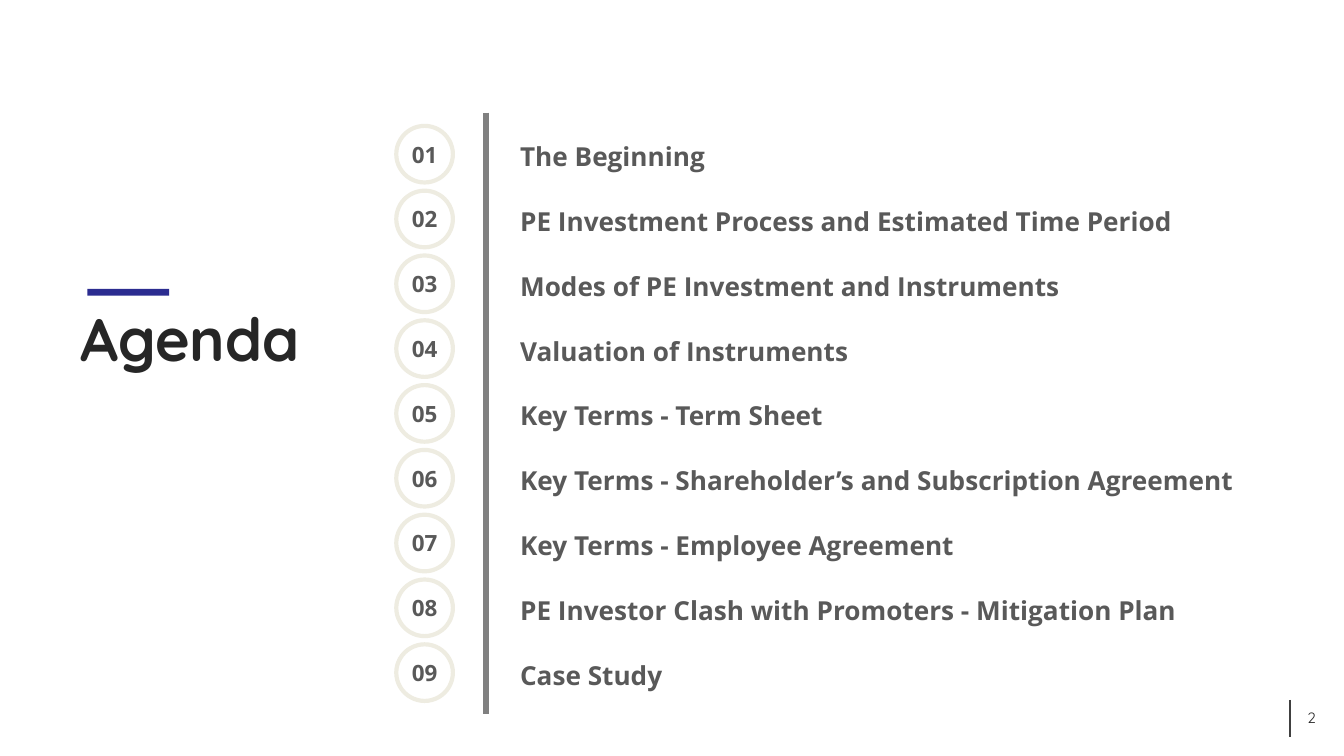
from dataclasses import dataclass

from lxml.etree import SubElement
from pptx import Presentation
from pptx.dml.color import RGBColor
from pptx.enum.shapes import MSO_CONNECTOR, MSO_SHAPE
from pptx.enum.text import MSO_ANCHOR, PP_ALIGN
from pptx.oxml.ns import qn
from pptx.util import Cm, Pt

HEX = {
    "bar": "2B2C90",
    "rule": "808080",
    "mark": "404040",
    "ring": "EEECE1",
    "dark": "262626",
    "body": "595959",
}
HEAD = "Quicksand"
BODY = "Open Sans"
PITCH = 9.8 / 8
RING = 1.07


@dataclass
class Topic:
    text: str
    width: float


TOPICS = [
    Topic("The Beginning", 7.37),
    Topic("PE Investment Process and Estimated Time Period", 12.7),
    Topic("Modes of PE Investment and Instruments", 11.94),
    Topic("Valuation of Instruments", 7.37),
    Topic("Key Terms - Term Sheet", 7.37),
    Topic("Key Terms - Shareholder’s and Subscription Agreement", 14.68),
    Topic("Key Terms - Employee Agreement", 12.24),
    Topic("PE Investor Clash with Promoters - Mitigation Plan", 13.44),
    Topic("Case Study", 4.62),
]


def tint(name: str) -> RGBColor:
    return RGBColor.from_string(HEX[name])


def write(shapes, text: str, left: float, top: float, width: float, height: float, *,
          size: float, font: str = BODY, color: str = "body", bold: bool = True,
          align=PP_ALIGN.LEFT, anchor=MSO_ANCHOR.MIDDLE, space: float = 1.0,
          inset: tuple[float, float] = (0, 0)) -> None:
    """Add a text box; inset is the side margin, then the top and bottom margin."""
    box = shapes.add_textbox(Cm(left), Cm(top), Cm(width), Cm(height))
    frame = box.text_frame
    frame.word_wrap = True
    frame.vertical_anchor = anchor
    frame.margin_left = frame.margin_right = Cm(inset[0])
    frame.margin_top = frame.margin_bottom = Cm(inset[1])
    para = frame.paragraphs[0]
    para.alignment = align
    para.line_spacing = space
    run = para.add_run()
    run.text = text
    run.font.name = font
    run.font.size = Pt(size)
    run.font.bold = bold
    run.font.color.rgb = tint(color)


def upright(shapes, x: float, top: float, end: float, color: str, weight: float) -> None:
    """Draw a vertical line."""
    line = shapes.add_connector(MSO_CONNECTOR.STRAIGHT, Cm(x), Cm(top), Cm(x), Cm(end))
    line.line.color.rgb = tint(color)
    line.line.width = Pt(weight)
    SubElement(line._element.spPr, qn("a:effectLst"))


def badge(shapes, number: int, top: float) -> None:
    """Draw a ringed two-digit number as one group."""
    group = shapes.add_group_shape().shapes
    write(group, f"{number:02}", 7.62, top + 0.28, 0.81, 0.51,
          size=12, align=PP_ALIGN.CENTER)
    ring = group.add_shape(MSO_SHAPE.OVAL, Cm(7.49), Cm(top), Cm(RING), Cm(RING))
    ring.shadow.inherit = False
    ring.fill.background()
    ring.line.color.rgb = tint("ring")
    ring.line.width = Pt(2.25)


def main() -> None:
    deck = Presentation()
    deck.slide_width, deck.slide_height = Cm(25.4), Cm(14.29)
    shapes = deck.slides.add_slide(deck.slide_layouts[6]).shapes

    upright(shapes, 24.38, 13.23, 13.94, "mark", 0.75)
    write(shapes, "Agenda", 1.27, 5.61, 5.92, 1.55, size=32, font=HEAD,
          color="dark", inset=(0.25, 0.13))
    upright(shapes, 9.19, 2.13, 13.49, "rule", 3)

    bar = shapes.add_shape(MSO_SHAPE.RECTANGLE, Cm(1.65), Cm(5.46), Cm(1.55), Cm(0.13))
    bar.shadow.inherit = False
    bar.fill.solid()
    bar.fill.fore_color.rgb = tint("bar")
    bar.line.fill.background()

    for row, topic in enumerate(TOPICS):
        shift = row * PITCH
        write(shapes, topic.text, 9.83, 2.54 + shift, topic.width, 0.71,
              size=14, anchor=MSO_ANCHOR.TOP, space=1.2)
        badge(shapes, row + 1, 2.38 + shift)

    write(shapes, "2", 19.2, 13.18, 5.92, 0.76, size=8, font=HEAD, color="dark",
          bold=False, align=PP_ALIGN.RIGHT, inset=(0.25, 0.13))
    deck.save("out.pptx")


if __name__ == "__main__":
    main()
